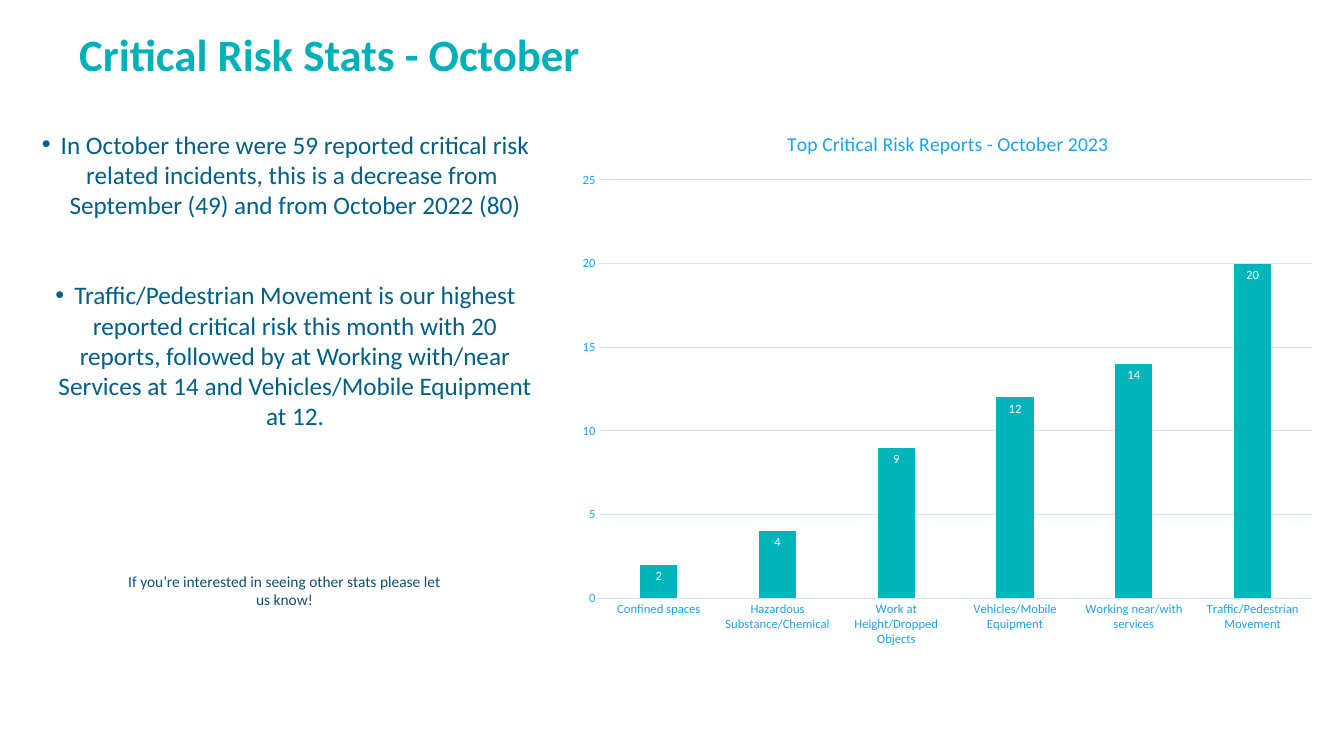
from lxml.etree import SubElement
from pptx import Presentation
from pptx.chart.data import CategoryChartData
from pptx.dml.color import RGBColor
from pptx.enum.chart import XL_CHART_TYPE, XL_LABEL_POSITION, XL_TICK_MARK
from pptx.enum.text import MSO_ANCHOR, PP_ALIGN
from pptx.oxml import parse_xml
from pptx.oxml.ns import nsdecls, qn
from pptx.util import Pt

PX = 9525
FONT = "Calibri"
COLORS = {
    "title": "00B0B9",
    "body": "005F86",
    "note": "0A5075",
    "axis": "1AA3EB",
    "grid": "CAEAFA",
    "bar": "00B4BC",
    "label": "FFFFFF",
}
FINDINGS = [
    "In October there were 59 reported critical risk related incidents, "
    "this is a decrease from \vSeptember (49) and from October 2022 (80)",
    "Traffic/Pedestrian Movement is our highest reported critical risk this month "
    "with 20 reports, followed by at Working with/near Services at 14 and "
    "Vehicles/Mobile Equipment at 12.",
]
REPORTS = {
    "Confined spaces": 2,
    "Hazardous Substance/Chemical": 4,
    "Work at Height/Dropped Objects": 9,
    "Vehicles/Mobile Equipment": 12,
    "Working near/with services": 14,
    "Traffic/Pedestrian Movement": 20,
}


def emu(box):
    return [v * PX for v in box]


def set_attrs(obj, values):
    for name, value in values.items():
        setattr(obj, name, value)


def set_font(font, size, color, bold=False):
    set_attrs(font, {"name": FONT, "size": Pt(size), "bold": bold})
    font.color.rgb = RGBColor.from_string(COLORS[color])


def add_text(s, box, paragraphs, size, color, bold=False, bullet=False, **layout):
    tf = s.shapes.add_textbox(*emu(box)).text_frame
    set_attrs(tf, {"word_wrap": True, "vertical_anchor": MSO_ANCHOR.TOP})
    for i, text in enumerate(paragraphs):
        p = tf.paragraphs[0] if i == 0 else tf.add_paragraph()
        p.text = text
        set_attrs(p, layout)
        if i:
            p.space_before = Pt(43)
        if bullet:
            pPr = p._p.get_or_add_pPr()
            pPr.set("marL", str(18 * PX))
            pPr.set("indent", str(-18 * PX))
            SubElement(pPr, qn("a:buFont")).set("typeface", "Arial")
            SubElement(pPr, qn("a:buChar")).set("char", "•")
        for r in p.runs:
            set_font(r.font, size, color, bold)


def set_plot_layout(chart, x, y, w, h):
    """Fix the inner plot area as fractions of the chart's size."""
    plot_area = chart._chartSpace.chart.plotArea
    for old in plot_area.findall(qn("c:layout")):
        plot_area.remove(old)
    values = "".join(f'<c:{k} val="{v}"/>' for k, v in
                     {"x": x, "y": y, "w": w, "h": h}.items())
    plot_area.insert(0, parse_xml(
        f'<c:layout {nsdecls("c")}><c:manualLayout><c:layoutTarget val="inner"/>'
        f'<c:xMode val="edge"/><c:yMode val="edge"/>{values}'
        '</c:manualLayout></c:layout>'))


def add_reports_chart(s, box):
    data = CategoryChartData()
    data.categories = list(REPORTS)
    data.add_series("Series 1", list(REPORTS.values()))
    chart = s.shapes.add_chart(
        XL_CHART_TYPE.COLUMN_CLUSTERED, *emu(box), data).chart
    set_font(chart.font, 10, "note")
    chart.has_legend = False

    tf = chart.chart_title.text_frame
    tf.text = "Top Critical Risk Reports - October 2023"
    set_font(tf.paragraphs[0].runs[0].font, 14, "axis")

    cat, val = chart.category_axis, chart.value_axis
    for axis in (cat, val):
        set_attrs(axis, {"major_tick_mark": XL_TICK_MARK.NONE,
                         "minor_tick_mark": XL_TICK_MARK.NONE})
        set_font(axis.tick_labels.font, 9, "axis")
    set_attrs(val, {"minimum_scale": 0, "maximum_scale": 25, "major_unit": 5,
                    "has_major_gridlines": True})
    val.format.line.fill.background()
    for line in (cat.format.line, val.major_gridlines.format.line):
        line.width = Pt(0.75)
        line.color.rgb = RGBColor.from_string(COLORS["grid"])

    plot = chart.plots[0]
    set_attrs(plot, {"gap_width": 219, "overlap": -27,
                     "vary_by_categories": False, "has_data_labels": True})
    set_attrs(plot.data_labels, {"show_value": True,
                                 "position": XL_LABEL_POSITION.INSIDE_END})
    set_font(plot.data_labels.font, 9, "label")
    fill = plot.series[0].format.fill
    fill.solid()
    fill.fore_color.rgb = RGBColor.from_string(COLORS["bar"])
    set_plot_layout(chart, 0.04, 0.13, 0.94, 0.78)


def add_stats_slide(prs):
    s = prs.slides.add_slide(prs.slide_layouts[6])
    add_text(s, (66, 29, 1147, 89), ["Critical Risk Stats - October"],
             32, "title", bold=True, line_spacing=Pt(32))
    add_text(s, (28, 118, 488, 483), FINDINGS, 18, "body", bullet=True,
             alignment=PP_ALIGN.CENTER, line_spacing=Pt(21.6))
    add_text(s, (110, 540, 322, 45),
             ["If you’re interested in seeing other stats please let us know!"],
             11, "note", alignment=PP_ALIGN.CENTER)
    add_reports_chart(s, (542, 105, 722, 511))


def main():
    prs = Presentation()
    set_attrs(prs, {"slide_width": 1280 * PX, "slide_height": 720 * PX})
    add_stats_slide(prs)
    prs.save("out.pptx")


if __name__ == "__main__":
    main()
